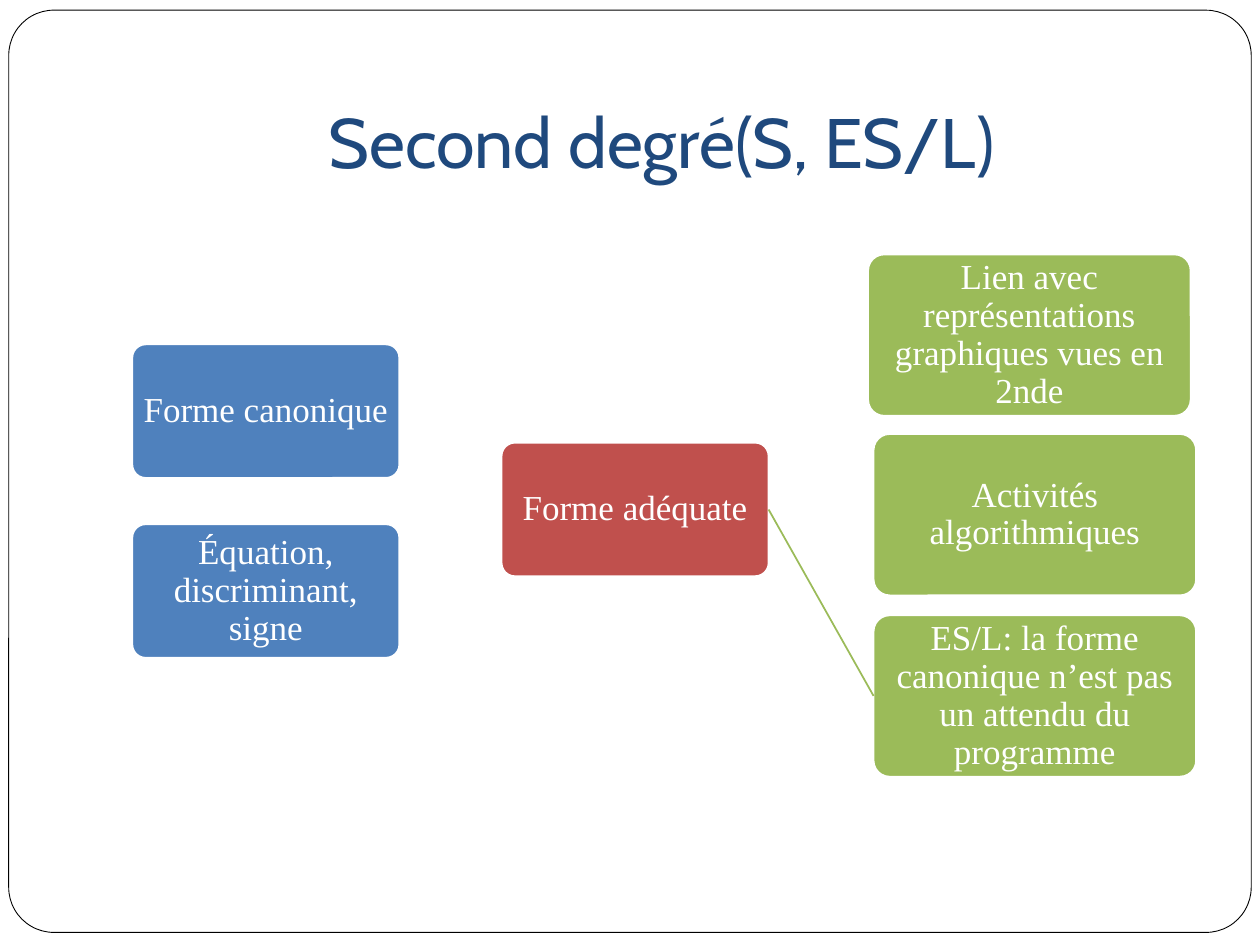
from lxml.etree import SubElement
from pptx import Presentation
from pptx.dml.color import RGBColor
from pptx.enum.shapes import MSO_CONNECTOR, MSO_SHAPE
from pptx.enum.text import MSO_ANCHOR, PP_ALIGN
from pptx.oxml.ns import qn
from pptx.util import Pt

COLORS = {
    "white": "FFFFFF",
    "black": "000000",
    "navy": "1F497D",
    "blue": "4F81BD",
    "red": "C0504D",
    "green": "9BBB59",
}
SMALL = (152.6, 76.3)
LARGE = (184.3, 92.2)


def color(name):
    return RGBColor.from_string(COLORS[name])


def add_round_rect(s, left, top, size, fill, line, line_width, radius):
    sp = s.shapes.add_shape(MSO_SHAPE.ROUNDED_RECTANGLE,
                            Pt(left), Pt(top), Pt(size[0]), Pt(size[1]))
    sp.adjustments[0] = radius
    sp.shadow.inherit = False
    sp.fill.solid()
    sp.fill.fore_color.rgb = color(fill)
    sp.line.color.rgb = color(line)
    sp.line.width = Pt(line_width)
    return sp


def write(tf, text, font, size, font_color):
    """Put one centred run in the frame and return its paragraph."""
    tf.word_wrap = True
    p = tf.paragraphs[0]
    p.alignment = PP_ALIGN.CENTER
    r = p.add_run()
    r.text = text
    r.font.name = font
    r.font.size = Pt(size)
    r.font.color.rgb = color(font_color)
    return p


def add_title(s, text):
    title = s.shapes.title
    title.left, title.top = Pt(72), Pt(21.6)
    title.width, title.height = Pt(612), Pt(90)
    tf = title.text_frame
    tf.vertical_anchor = MSO_ANCHOR.BOTTOM
    tf.margin_left = tf.margin_right = tf.margin_bottom = Pt(7.2)
    tf.margin_top = Pt(3.6)
    write(tf, text, "Cabin", 40, "navy")


def add_frame(s):
    """Draw the page border behind the title."""
    frame = add_round_rect(s, 5, 5.8, (710, 527), "white", "black", 0.5, 0.049)
    s.shapes.title.element.addprevious(frame.element)


def add_box(s, text, left, top, size, fill):
    sp = add_round_rect(s, left, top, size, fill, "white", 1, 0.1)
    tf = sp.text_frame
    tf.vertical_anchor = MSO_ANCHOR.MIDDLE
    tf.margin_left = tf.margin_right = Pt(2)
    tf.margin_top = tf.margin_bottom = Pt(1)
    write(tf, text, "Times New Roman", 20, "white").line_spacing = 0.9
    return sp


def add_link(s, start, end):
    """Join the right side of start to the left side of end."""
    link = s.shapes.add_connector(MSO_CONNECTOR.STRAIGHT, 0, 0, 0, 0)
    link.begin_connect(start, 3)
    link.end_connect(end, 1)
    link.line.color.rgb = color("green")
    link.line.width = Pt(1)
    SubElement(link.element.spPr, qn("a:effectLst"))


def main():
    prs = Presentation()
    prs.slide_width, prs.slide_height = Pt(720), Pt(540)
    s = prs.slides.add_slide(prs.slide_layouts[5])

    add_title(s, "Second degré(S, ES/L)")
    add_frame(s)

    add_box(s, "Forme canonique", 75.6, 196.8, SMALL, "blue")
    add_box(s, "Équation, discriminant, signe", 75.6, 299.6, SMALL, "blue")
    suitable_form = add_box(s, "Forme adéquate", 286.6, 253, SMALL, "red")
    add_box(s, "Lien avec représentations graphiques vues en 2nde",
            496.1, 145.4, LARGE, "green")
    add_box(s, "Activités algorithmiques", 499.2, 248, LARGE, "green")
    syllabus = add_box(
        s, "ES/L: la forme canonique n’est pas un attendu du programme",
        499.2, 351.6, LARGE, "green")
    add_link(s, suitable_form, syllabus)

    prs.save("out.pptx")


if __name__ == "__main__":
    main()
